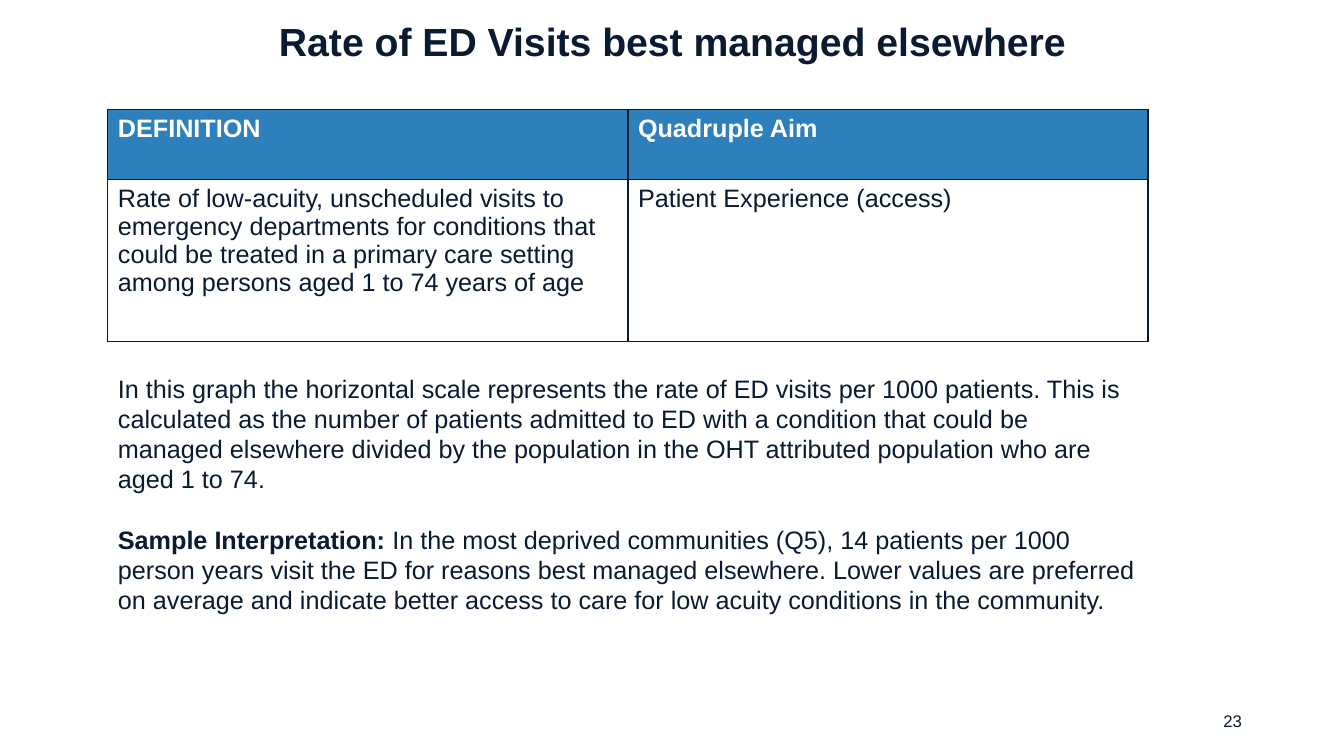
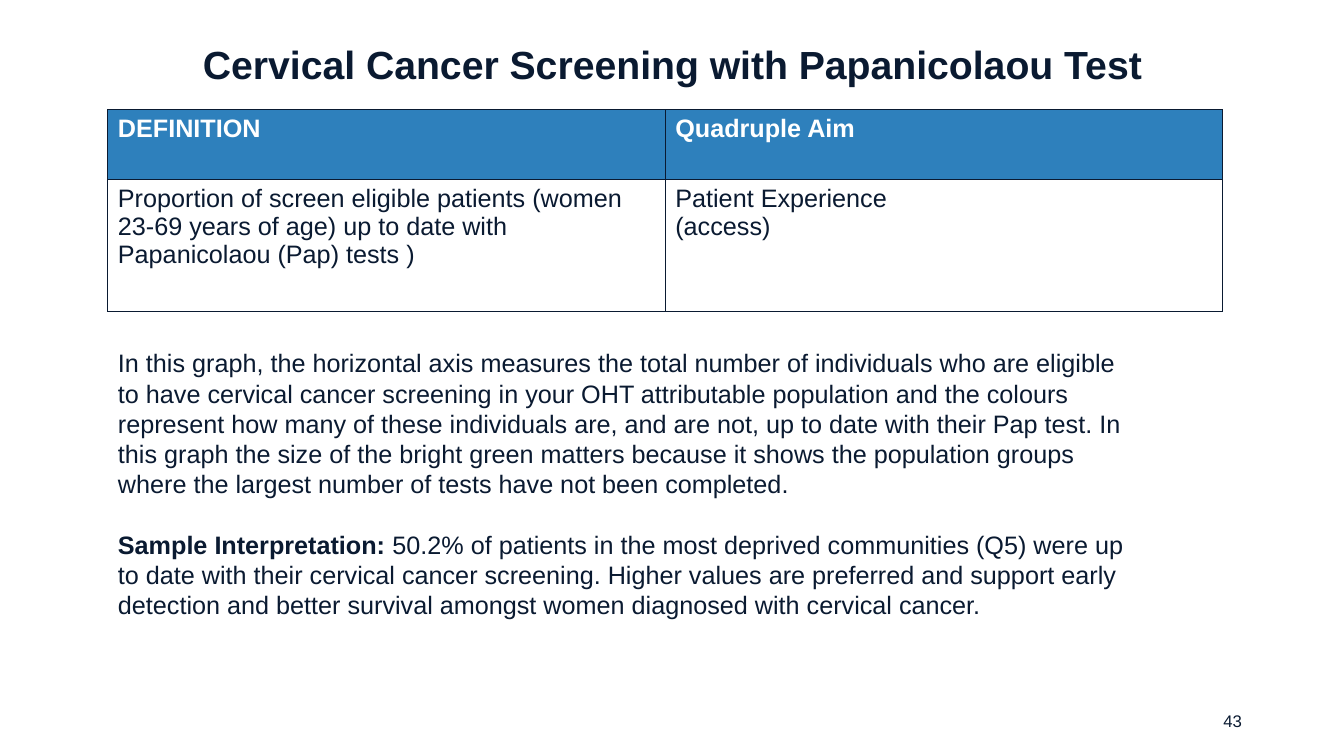
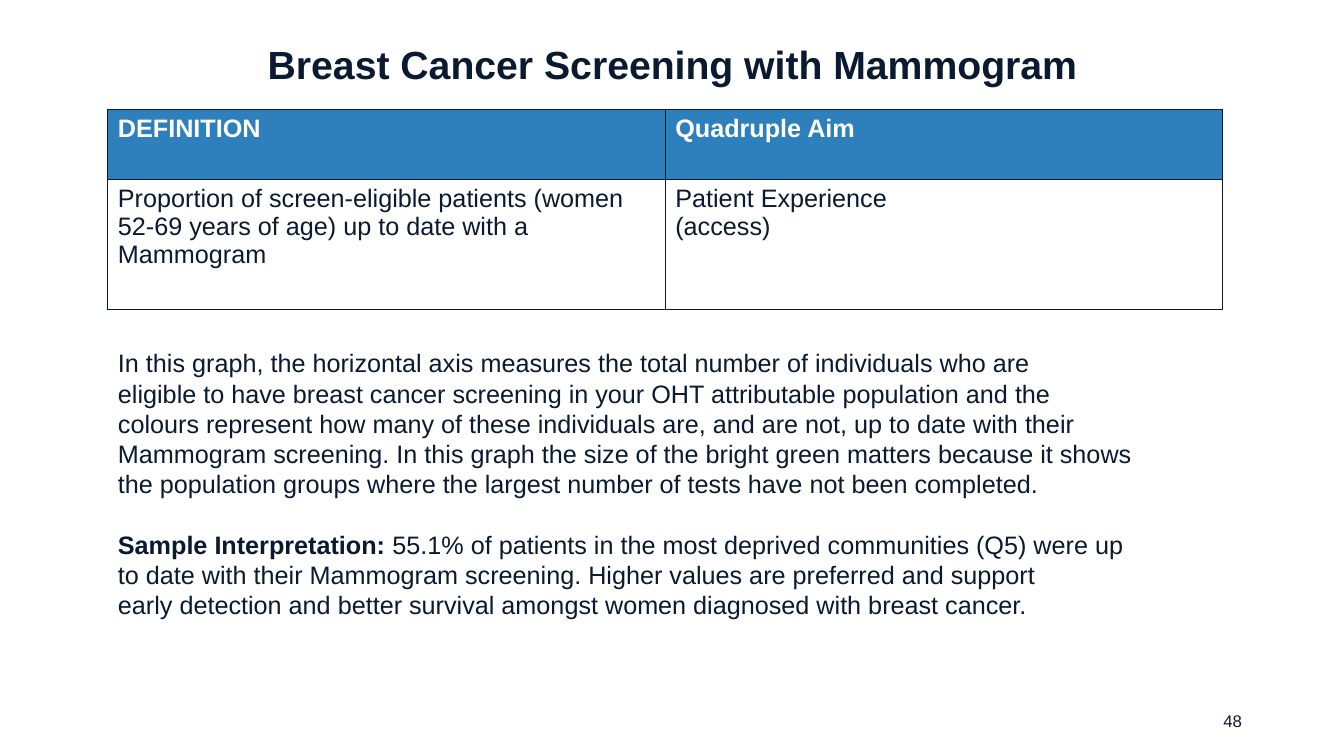
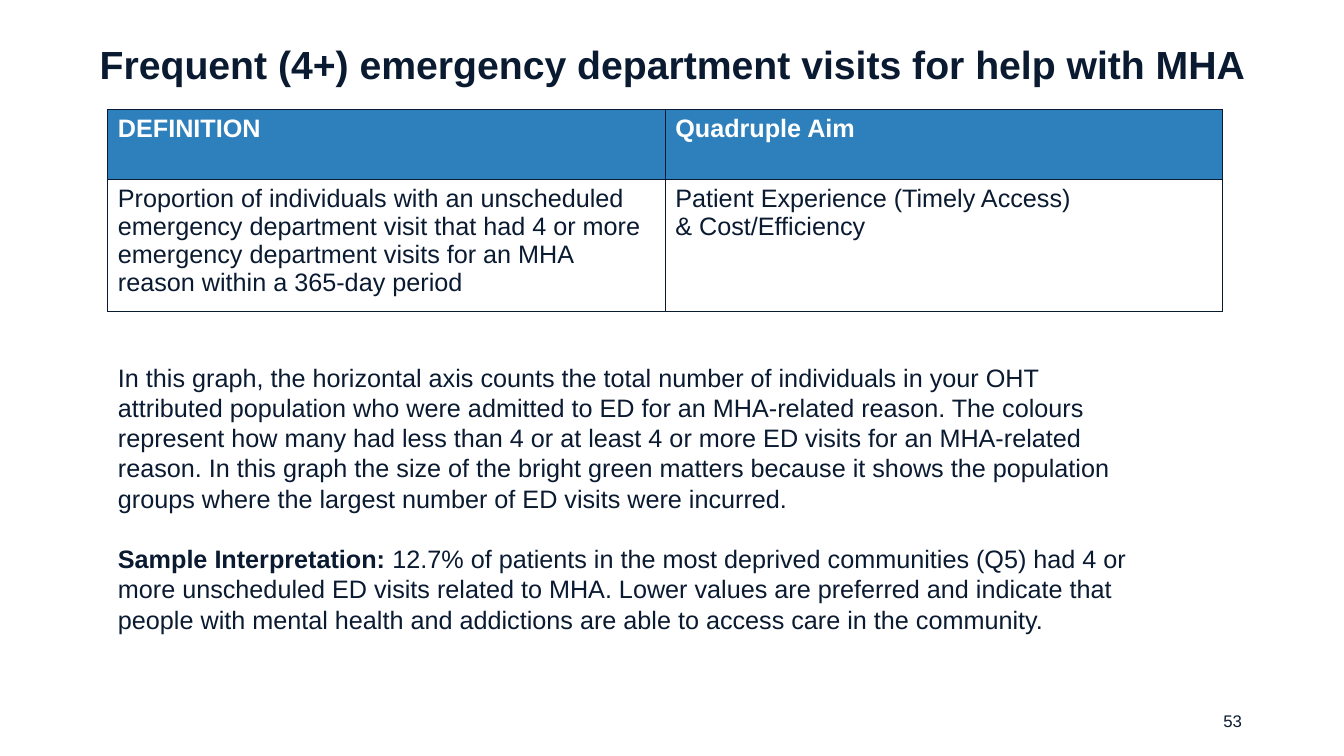
from dataclasses import dataclass
from pptx import Presentation
from pptx.dml.color import RGBColor
from pptx.enum.text import MSO_ANCHOR, MSO_AUTO_SIZE, PP_ALIGN
from pptx.oxml import parse_xml
from pptx.oxml.ns import nsdecls
from pptx.util import Inches, Pt


@dataclass(frozen=True)
class Theme:
    font: str = "Arial"
    ink: str = "0A1A31"
    header: str = "2E80BC"
    white: str = "FFFFFF"
    title_size: int = 28
    text_size: int = 18
    number_size: int = 12
    border: int = 1
    title_spacing: float = 0.9
    body_spacing: float = 1.0
    body_gap: float = 21.6


@dataclass(frozen=True)
class Indicator:
    number: str
    title: str
    definition: str
    aim: tuple
    reading: str
    sample: str
    title_top: float = 0.24
    table_width: float = 11.06
    row_height: float = 1.31
    body_top: float = 3.4


T = Theme()
HEADINGS = ("DEFINITION", "Quadruple Aim")
HEADER_HEIGHT = 0.69
GLUE, HARD_SPACE = "~", chr(160)

INDICATORS = (
    Indicator(
        number="23",
        title="Rate of ED Visits best managed elsewhere",
        definition="Rate of low-acuity, unscheduled visits to emergency departments for conditions "
                   "that could be treated in a primary care setting among persons aged 1 to 74 years of age",
        aim=("Patient Experience (access)",),
        reading="In this graph the horizontal scale represents the rate of ED visits per 1000 patients. "
                "This is calculated as the number of patients admitted to ED with a condition that could be "
                "managed elsewhere divided by the population in the OHT attributed population who are "
                "aged 1 to 74.",
        sample="In the most deprived communities (Q5), 14 patients per 1000 person years visit the ED for "
               "reasons best managed elsewhere. Lower values are preferred on average and indicate better "
               "access to care for low acuity conditions in the community.",
        title_top=0.01, table_width=10.32, row_height=1.61, body_top=3.65,
    ),
    Indicator(
        number="43",
        title="Cervical Cancer Screening with Papanicolaou Test",
        definition="Proportion of screen eligible patients (women 23-69 years of age) up to date with "
                   "Papanicolaou (Pap) tests )",
        aim=("Patient Experience", "(access)"),
        reading="In this graph, the horizontal axis measures the total number of individuals who are eligible "
                "to have cervical cancer screening in your OHT attributable population and the colours "
                "represent how~many of these individuals are, and are not, up to date with their Pap test.~In "
                "this graph the size of the~bright green matters because it shows the population groups "
                "where the largest number of tests have not been completed.",
        sample="50.2% of patients in the most deprived communities (Q5) were up to date with their cervical "
               "cancer screening. Higher values are preferred and support early detection and better survival "
               "amongst women diagnosed with cervical cancer.",
    ),
    Indicator(
        number="48",
        title="Breast Cancer Screening with Mammogram",
        definition="Proportion of screen-eligible patients (women 52-69 years of age) up to date with a Mammogram",
        aim=("Patient Experience", "(access)"),
        reading="In this graph, the horizontal axis measures the total number of individuals who are "
                "eligible~to have breast cancer screening in your OHT attributable population and the "
                "colours~represent how~many of these individuals~are, and~are not, up to date with their "
                "Mammogram screening. In~this graph the size of the~bright green matters because it shows "
                "the population groups~where the~largest number of tests have not been completed.",
        sample="55.1% of patients in the most deprived communities (Q5) were up to date with their Mammogram "
               "screening.~Higher values are preferred and support early~detection and better survival "
               "amongst women diagnosed with breast cancer.",
        row_height=1.29,
    ),
    Indicator(
        number="53",
        title="Frequent (4+) emergency department visits for help with MHA",
        definition="Proportion of individuals with an unscheduled emergency department visit that had 4 or more "
                   "emergency department visits for an MHA reason within a 365-day period",
        aim=("Patient Experience (Timely Access)", "& Cost/Efficiency"),
        reading="In this graph, the horizontal axis counts the total number of individuals in your OHT "
                "attributed population who were admitted to ED for an MHA-related reason. The colours "
                "represent how many had less than 4 or at least 4 or more ED visits for an MHA-related "
                "reason.~In~this graph the size of the~bright green matters because it shows the population "
                "groups where the~largest number of ED visits were incurred.",
        sample="12.7% of patients in the most deprived communities (Q5) had 4 or more unscheduled ED visits "
               "related to MHA. Lower values are preferred and indicate that people with mental health and "
               "addictions are able to access care in the community.",
        body_top=3.54,
    ),
)


def add_run(p, text, size=T.text_size, color=T.ink, bold=False):
    r = p.add_run()
    r.text = text.replace(GLUE, HARD_SPACE)
    r.font.name = T.font
    r.font.size = Pt(size)
    r.font.bold = bold
    r.font.color.rgb = RGBColor.from_string(color)


def place(sp, box, anchor):
    sp.left, sp.top, sp.width, sp.height = (Inches(v) for v in box)
    tf = sp.text_frame
    tf.word_wrap = True
    tf.auto_size = MSO_AUTO_SIZE.NONE
    tf.vertical_anchor = anchor
    return tf


def add_title(s, box, text):
    p = place(s.shapes.title, box, MSO_ANCHOR.MIDDLE).paragraphs[0]
    p.alignment = PP_ALIGN.CENTER
    p.line_spacing = T.title_spacing
    add_run(p, text, T.title_size, bold=True)


def fill_cell(cell, lines, fill, color, bold):
    cell.fill.solid()
    cell.fill.fore_color.rgb = RGBColor.from_string(fill)
    tf = cell.text_frame
    for i, line in enumerate(lines):
        p = tf.add_paragraph() if i else tf.paragraphs[0]
        add_run(p, line, color=color, bold=bold)
    tcPr = cell._tc.get_or_add_tcPr()
    for i, side in enumerate(("lnL", "lnR", "lnT", "lnB")):
        tcPr.insert(i, parse_xml(
            f'<a:{side} {nsdecls("a")} w="{Pt(T.border)}"><a:solidFill>'
            f'<a:srgbClr val="{T.ink}"/></a:solidFill></a:{side}>'))


def add_definition_table(s, box, definition, aim):
    x, y, w, h = (Inches(v) for v in box)
    table = s.shapes.add_table(2, 2, x, y, w, h).table
    table.rows[0].height = Inches(HEADER_HEIGHT)
    table.rows[1].height = h - Inches(HEADER_HEIGHT)
    for col, (heading, lines) in enumerate(zip(HEADINGS, ((definition,), aim))):
        fill_cell(table.cell(0, col), (heading,), T.header, T.white, True)
        fill_cell(table.cell(1, col), lines, T.white, T.ink, False)


def add_body(s, box, reading, sample):
    tf = place(s.placeholders[1], box, MSO_ANCHOR.TOP)
    first, second = tf.paragraphs[0], tf.add_paragraph()
    for p, gap in ((first, 0), (second, T.body_gap)):
        pPr = p._p.get_or_add_pPr()
        pPr.set("marL", "0")
        pPr.set("indent", "0")
        pPr.append(parse_xml(f'<a:buNone {nsdecls("a")}/>'))
        p.line_spacing = T.body_spacing
        p.space_before = Pt(gap)
        p.alignment = PP_ALIGN.LEFT
    add_run(first, reading)
    add_run(second, "Sample Interpretation: ", bold=True)
    add_run(second, sample)


def add_number(s, box, number):
    sp = s.shapes.add_textbox(*(Inches(v) for v in box))
    p = place(sp, box, MSO_ANCHOR.MIDDLE).paragraphs[0]
    p.alignment = PP_ALIGN.RIGHT
    add_run(p, number, T.number_size)


def add_indicator_slide(prs, item):
    s = prs.slides.add_slide(prs.slide_layouts[1])
    add_title(s, (0.77, item.title_top, 11.8, 0.84), item.title)
    add_definition_table(s, (1.07, 1.09, item.table_width, HEADER_HEIGHT + item.row_height),
                         item.definition, item.aim)
    add_body(s, (1.07, item.body_top, 10.32, 2.83), item.reading, item.sample)
    add_number(s, (9.42, 6.95, 3, 0.4), item.number)


def main():
    prs = Presentation()
    prs.slide_width, prs.slide_height = Inches(40 / 3), Inches(7.5)
    for item in INDICATORS:
        add_indicator_slide(prs, item)
    prs.save("out.pptx")


if __name__ == "__main__":
    main()
